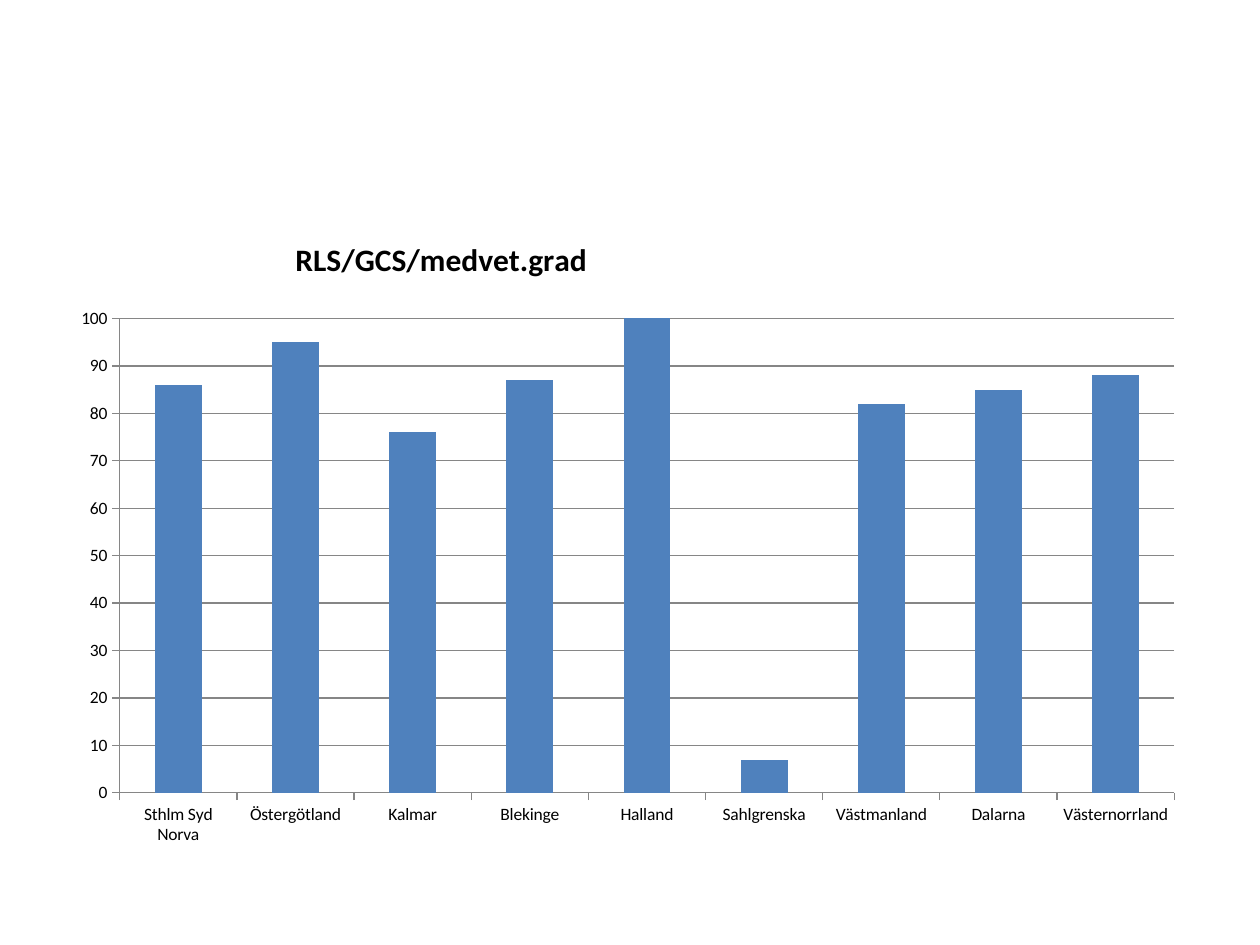
from pptx import Presentation
from pptx import util as u
from pptx.chart.data import CategoryChartData
from pptx.dml.color import RGBColor
from pptx.enum import chart as kinds
from pptx.oxml import parse_xml
from pptx.oxml.ns import nsdecls, qn

# Content
TITLE = "RLS/GCS/medvet.grad"
SERIES = "Series 1"
SHARES = [
    ("Sthlm Syd Norva", 86),
    ("Östergötland", 95),
    ("Kalmar", 76),
    ("Blekinge", 87),
    ("Halland", 100),
    ("Sahlgrenska", 7),
    ("Västmanland", 82),
    ("Dalarna", 85),
    ("Västernorrland", 88),
]
COLORS = {"bar": "4F81BD", "line": "868686", "text": "000000"}
FONT = "Calibri"

# Lengths in px, 126 to the inch
PX = u.Inches(1) // 126
PAGE = (1260, 945)
CHART = (63, 220, 1134, 624)
PLOT = {"x": 0.05, "y": 0.16, "w": 0.93, "h": 0.77}
TITLE_SPOT = {"x": 0.2, "y": 0.02}


def color(name):
    return RGBColor.from_string(COLORS[name])


def set_layout(parent, index, spot, inner=False):
    """Place a chart part by fractions of the chart's size."""
    for old in parent.findall(qn("c:layout")):
        parent.remove(old)
    target = '<c:layoutTarget val="inner"/>' if inner else ""
    modes = "".join(f'<c:{key}Mode val="edge"/>' for key in "xy")
    sizes = "".join(f'<c:{key} val="{value}"/>' for key, value in spot.items())
    parent.insert(index, parse_xml(
        f'<c:layout {nsdecls("c")}><c:manualLayout>{target}{modes}{sizes}'
        "</c:manualLayout></c:layout>"))


def style_line(line):
    line.color.rgb = color("line")
    line.width = u.Pt(0.75)


deck = Presentation()
deck.slide_width, deck.slide_height = (side * PX for side in PAGE)
page = deck.slides.add_slide(deck.slide_layouts[6])

# Chart
data = CategoryChartData()
data.categories = [region for region, _ in SHARES]
data.add_series(SERIES, [share for _, share in SHARES])
chart = page.shapes.add_chart(
    kinds.XL_CHART_TYPE.COLUMN_CLUSTERED, *(side * PX for side in CHART), data).chart
chart.has_legend = False
chart.font.name = FONT
chart.font.size = u.Pt(10)
chart.font.color.rgb = color("text")
set_layout(chart.element.find(".//" + qn("c:plotArea")), 0, PLOT, inner=True)

# Title
chart.has_title = True
title = chart.chart_title
title.include_in_layout = True
para = title.text_frame.paragraphs[0]
para.text = TITLE
para.font.name = FONT
para.font.size = u.Pt(18)
para.font.bold = True
para.font.color.rgb = color("text")
set_layout(title.element if hasattr(title, "element") else title._element, 1, TITLE_SPOT)

# Bars
plot = chart.plots[0]
plot.gap_width = 150
plot.vary_by_categories = False
bars = plot.series[0]
bars.format.fill.solid()
bars.format.fill.fore_color.rgb = color("bar")

# Axes
for axis in (chart.category_axis, chart.value_axis):
    axis.major_tick_mark = kinds.XL_TICK_MARK.OUTSIDE
    axis.minor_tick_mark = kinds.XL_TICK_MARK.NONE
    style_line(axis.format.line)
scale = chart.value_axis
scale.minimum_scale, scale.maximum_scale, scale.major_unit = 0, 100, 10
scale.has_major_gridlines = True
style_line(scale.major_gridlines.format.line)

deck.save("out.pptx")
